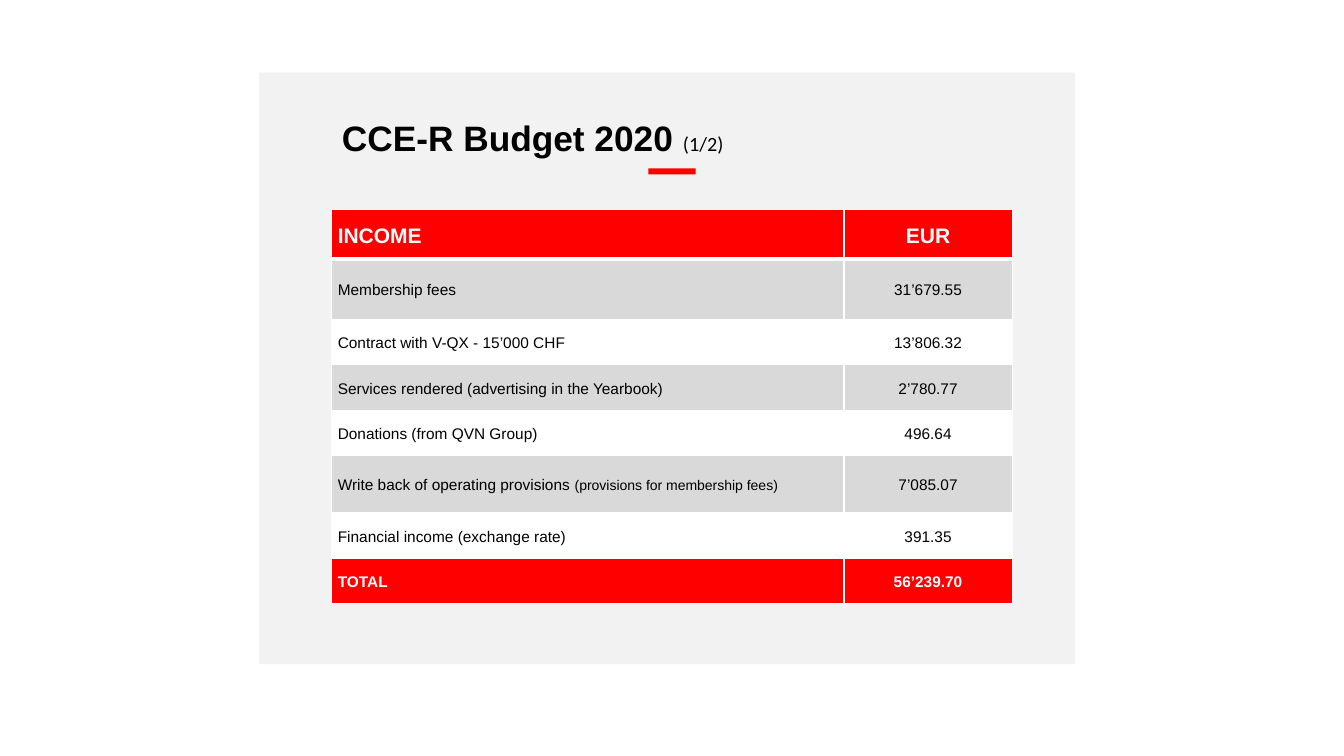
from dataclasses import dataclass

from lxml import etree
from pptx import Presentation
from pptx import util as u
from pptx.dml.color import RGBColor
from pptx.enum import shapes, text
from pptx.oxml import ns


@dataclass(frozen=True)
class Theme:
    panel: str = "F2F2F2"
    accent: str = "FF0000"
    band: str = "D9D9D9"
    white: str = "FFFFFF"
    black: str = "000000"
    font: str = "Arial"
    counter_font: str = "Calibri"
    title_size: float = 25.2
    counter_size: float = 14.4
    header_size: float = 15
    body_size: float = 11
    note_size: float = 10
    border: float = 1
    header_border: float = 3


def set_attributes(target, values):
    for name, value in values.items():
        setattr(target, name, value)


class SlideBuilder:
    def __init__(self, presentation, theme):
        self.theme = theme
        self.slide = presentation.slides.add_slide(presentation.slide_layouts[5])

    def add_runs(self, paragraph, runs, color):
        """Each run is a tuple: text, size, font name, bold."""
        for words, size, font_name, bold in runs:
            run = paragraph.add_run()
            run.text = words
            set_attributes(run.font, {"name": font_name, "size": u.Pt(size), "bold": bold})
            run.font.color.rgb = RGBColor.from_string(color)

    def rectangle(self, box, color):
        shape = self.slide.shapes.add_shape(
            shapes.MSO_SHAPE.RECTANGLE, *map(u.Inches, box))
        shape.shadow.inherit = False
        shape.fill.solid()
        shape.fill.fore_color.rgb = RGBColor.from_string(color)
        shape.line.fill.background()
        return shape

    def panel(self, box, color):
        """A rectangle placed behind the title."""
        shape = self.rectangle(box, color)
        self.slide.shapes.title.element.addprevious(shape.element)

    def title(self, box, runs):
        title = self.slide.shapes.title
        set_attributes(title, dict(zip(("left", "top", "width", "height"), map(u.Inches, box))))
        set_attributes(title.text_frame, {
            "word_wrap": True,
            "auto_size": text.MSO_AUTO_SIZE.NONE,
            "vertical_anchor": text.MSO_ANCHOR.MIDDLE,
        })
        paragraph = title.text_frame.paragraphs[0]
        set_attributes(paragraph, {"alignment": text.PP_ALIGN.LEFT, "line_spacing": 0.9})
        self.add_runs(paragraph, runs, self.theme.black)

    def borders(self, cell, widths):
        properties = cell._tc.get_or_add_tcPr()
        for index, (side, width) in enumerate(widths.items()):
            line = etree.Element(ns.qn(f"a:ln{side}"), w=str(u.Pt(width)))
            fill = etree.SubElement(line, ns.qn("a:solidFill"))
            etree.SubElement(fill, ns.qn("a:srgbClr"), val=self.theme.white)
            properties.insert(index, line)

    def cell(self, cell, runs, alignment, fill, color):
        cell.fill.solid()
        cell.fill.fore_color.rgb = RGBColor.from_string(fill)
        set_attributes(cell, {
            "vertical_anchor": text.MSO_ANCHOR.MIDDLE,
            "margin_left": u.Inches(0.06),
            "margin_right": u.Inches(0.06),
            "margin_top": 0,
            "margin_bottom": 0,
        })
        paragraph = cell.text_frame.paragraphs[0]
        set_attributes(paragraph, {"alignment": alignment, "line_spacing": 1.15})
        self.add_runs(paragraph, runs, color)

    def budget_table(self, box, widths, heights, rows):
        """Each row is a tuple: label, amount, optional note after the label."""
        theme = self.theme
        table = self.slide.shapes.add_table(
            len(rows), len(widths), *map(u.Inches, box)).table
        set_attributes(table, {"first_row": False, "horz_banding": False})
        for column, width in zip(table.columns, widths):
            column.width = u.Inches(width)

        last = len(rows) - 1
        for index, (label, amount, *notes) in enumerate(rows):
            table.rows[index].height = u.Inches(heights[index])
            strong = index in (0, last)
            fill = theme.accent if strong else theme.band if index % 2 else theme.white
            color = theme.white if strong else theme.black
            size = theme.header_size if index == 0 else theme.body_size
            label_runs = [(label, size, theme.font, strong)]
            label_runs += [(note, theme.note_size, theme.font, strong) for note in notes]
            amount_runs = [(amount, size, theme.font, strong)]
            edges = {
                "L": theme.border,
                "R": theme.border,
                "T": theme.header_border if index == 1 else theme.border,
                "B": theme.header_border if index == 0 else theme.border,
            }
            alignments = (text.PP_ALIGN.LEFT, text.PP_ALIGN.CENTER)
            for column, runs in enumerate((label_runs, amount_runs)):
                cell = table.cell(index, column)
                self.cell(cell, runs, alignments[column], fill, color)
                self.borders(cell, edges)


def main():
    presentation = Presentation()
    set_attributes(presentation, {
        "slide_width": u.Inches(13.33), "slide_height": u.Inches(7.5)})
    theme = Theme()
    builder = SlideBuilder(presentation, theme)

    # Background panel and title
    builder.panel((2.57, 0.72, 8.09, 5.87), theme.panel)
    builder.title((3.29, 1.16, 6.75, 0.46), [
        ("CCE-R Budget 2020 ", theme.title_size, theme.font, True),
        ("(1/2)", theme.counter_size, theme.counter_font, False),
    ])

    # Accent bar
    builder.rectangle((6.43, 1.67, 0.47, 0.06), theme.accent)

    # Income table
    builder.budget_table(
        (3.29, 2.08, 6.75, 3.94),
        widths=(5.08, 1.67),
        heights=(0.49, 0.6, 0.45, 0.45, 0.45, 0.57, 0.45, 0.45),
        rows=[
            ("INCOME", "EUR"),
            ("Membership fees", "31’679.55"),
            ("Contract with V-QX - 15’000 CHF", "13’806.32"),
            ("Services rendered (advertising in the Yearbook)", "2’780.77"),
            ("Donations (from QVN Group)", "496.64"),
            ("Write back of operating provisions ", "7’085.07",
             "(provisions for membership fees)"),
            ("Financial income (exchange rate)", "391.35"),
            ("TOTAL", "56’239.70"),
        ],
    )

    presentation.save("out.pptx")


if __name__ == "__main__":
    main()
